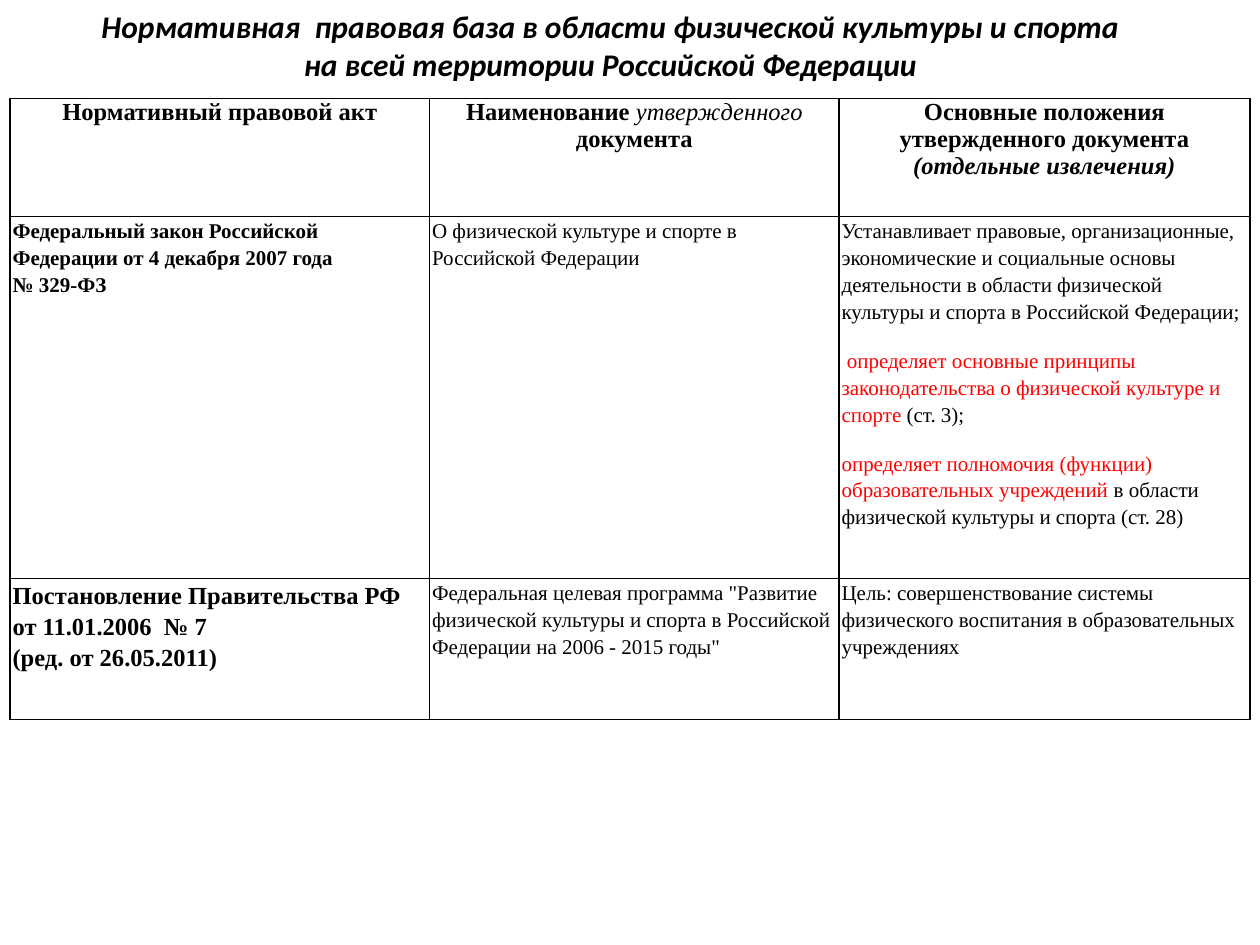
from dataclasses import dataclass, field
from typing import Any

from lxml.etree import SubElement
from pptx import Presentation
from pptx.dml.color import RGBColor
from pptx.enum.text import MSO_ANCHOR, MSO_AUTO_SIZE, PP_ALIGN
from pptx.oxml.ns import qn
from pptx.util import Inches, Pt


@dataclass(frozen=True)
class Theme:
    title_font: str = "Calibri"
    table_font: str = "Times New Roman"
    title_size: int = 18
    heading_size: int = 14
    body_size: int = 12
    text: str = "000000"
    accent: str = "FF0000"
    border: str = "000000"
    border_width: float = 1


THEME = Theme()


@dataclass(frozen=True)
class Run:
    text: str
    bold: bool = False
    italic: bool = False
    size: int = THEME.body_size
    color: str = THEME.text
    font: str = THEME.table_font


@dataclass(frozen=True)
class Para:
    runs: list[Run]
    layout: dict[str, Any] = field(default_factory=dict)


CENTERED = {"alignment": PP_ALIGN.CENTER}
SPACED = {"space_before": Pt(3.8), "space_after": Pt(9)}
LOOSE = {"line_spacing": 1.15}


def heading(text: str, bold: bool = True, italic: bool = False) -> Run:
    return Run(text, bold, italic, THEME.heading_size)


def accent(text: str) -> Run:
    return Run(text, color=THEME.accent)


def body(*runs: Run) -> Para:
    return Para(list(runs), LOOSE | SPACED)


def title_line(text: str) -> Para:
    return Para([Run(text, True, True, THEME.title_size, font=THEME.title_font)], CENTERED)


TITLE = [
    title_line("Нормативная  правовая база в области физической культуры и спорта"),
    title_line("на всей территории Российской Федерации"),
]

HEADER = [
    [Para([heading("Нормативный правовой акт")], CENTERED | SPACED)],
    [Para([heading("Наименование "),
           heading("утвержденного ", bold=False, italic=True),
           heading("документа")], CENTERED | SPACED)],
    [Para([heading("Основные положения")], CENTERED),
     Para([heading("утвержденного документа "),
           heading("(отдельные извлечения)", italic=True)], CENTERED)],
]

FEDERAL_LAW = [
    [Para([Run("Федеральный закон Российской Федерации от 4 декабря 2007 года", bold=True)], LOOSE),
     Para([Run("№ 329-ФЗ", bold=True)], LOOSE)],
    [body(Run("О физической культуре и спорте в Российской Федерации"))],
    [body(Run("Устанавливает правовые, организационные, экономические и социальные основы "
              "деятельности в области физической культуры и спорта в Российской Федерации;")),
     body(Run(" "),
          accent("определяет основные принципы законодательства о физической культуре и спорте "),
          Run("(ст. 3);")),
     body(accent("определяет полномочия (функции) образовательных учреждений "),
          Run("в области физической культуры и спорта (ст. 28)"))],
]

DECREE = [
    [Para([heading("Постановление Правительства РФ от 11.01.2006  № 7\n(ред. от 26.05.2011)")],
          LOOSE | {"space_after": Pt(10)})],
    [body(Run('Федеральная целевая программа "Развитие физической культуры и спорта '
              'в Российской Федерации на 2006 - 2015 годы"'))],
    [body(Run("Цель: совершенствование системы физического воспитания "
              "в образовательных учреждениях"))],
]

ACTS = [HEADER, FEDERAL_LAW, DECREE]
COLUMN_WIDTHS = [3.33, 3.25, 3.26]
ROW_HEIGHTS = [0.94, 2.87, 1.12]


def apply(target: Any, values: dict[str, Any]) -> None:
    for attribute, value in values.items():
        setattr(target, attribute, value)


def write(frame: Any, paras: list[Para]) -> None:
    for index, para in enumerate(paras):
        paragraph = frame.add_paragraph() if index else frame.paragraphs[0]
        apply(paragraph, para.layout)
        for part in para.runs:
            for number, line in enumerate(part.text.split("\n")):
                if number:
                    paragraph.add_line_break()
                run = paragraph.add_run()
                run.text = line
                apply(run.font, {"name": part.font, "size": Pt(part.size),
                                 "bold": part.bold, "italic": part.italic})
                run.font.color.rgb = RGBColor.from_string(part.color)


def set_borders(cell: Any) -> None:
    properties = cell._tc.get_or_add_tcPr()
    for position, side in enumerate(("a:lnL", "a:lnR", "a:lnT", "a:lnB")):
        line = SubElement(properties, qn(side), w=str(Pt(THEME.border_width)))
        fill = SubElement(line, qn("a:solidFill"))
        SubElement(fill, qn("a:srgbClr"), val=THEME.border)
        properties.insert(position, line)


def add_title(slide: Any) -> None:
    box = slide.shapes.add_textbox(Inches(0), Inches(0), Inches(9.69), Inches(0.71))
    apply(box.text_frame, {"word_wrap": True, "vertical_anchor": MSO_ANCHOR.MIDDLE,
                           "auto_size": MSO_AUTO_SIZE.SHAPE_TO_FIT_TEXT})
    write(box.text_frame, TITLE)


def add_acts_table(slide: Any) -> None:
    table = slide.shapes.add_table(
        len(ROW_HEIGHTS), len(COLUMN_WIDTHS), Inches(0.08), Inches(0.78),
        Inches(sum(COLUMN_WIDTHS)), Inches(sum(ROW_HEIGHTS))).table
    apply(table, {"first_row": False, "horz_banding": False})
    for column, width in zip(table.columns, COLUMN_WIDTHS):
        column.width = Inches(width)
    for row, height, act in zip(table.rows, ROW_HEIGHTS, ACTS):
        row.height = Inches(height)
        for cell, paras in zip(row.cells, act):
            apply(cell, {"margin_left": Inches(0.02), "margin_right": Inches(0.02),
                         "margin_top": 0, "margin_bottom": 0})
            cell.fill.background()
            set_borders(cell)
            write(cell.text_frame, paras)


def main() -> None:
    deck = Presentation()
    apply(deck, {"slide_width": Inches(10), "slide_height": Inches(7.5)})
    slide = deck.slides.add_slide(deck.slide_layouts[6])
    add_acts_table(slide)
    add_title(slide)
    deck.save("out.pptx")


if __name__ == "__main__":
    main()
